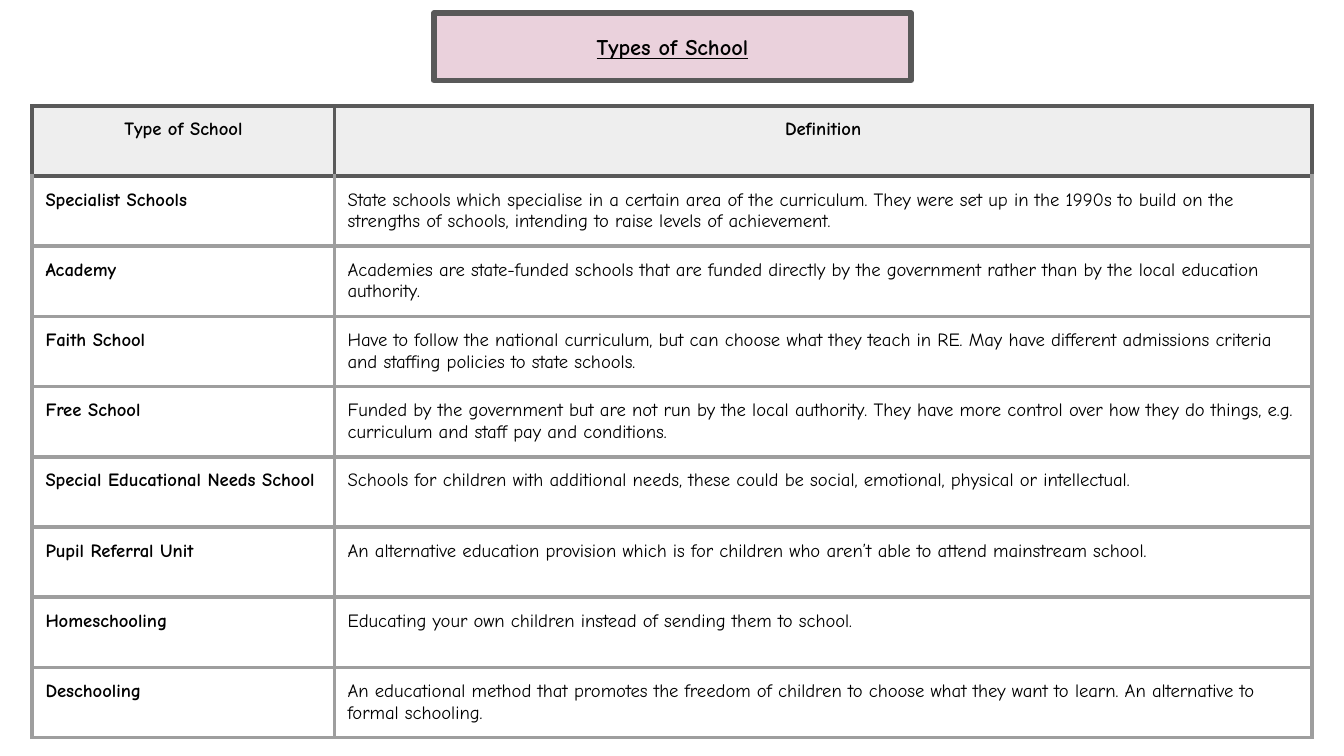
from lxml import etree
from pptx import Presentation
from pptx.dml.color import RGBColor
from pptx.enum.text import MSO_ANCHOR, MSO_AUTO_SIZE, PP_ALIGN
from pptx.oxml.ns import qn
from pptx.util import Cm, Pt

CENTER, LEFT = PP_ALIGN.CENTER, PP_ALIGN.LEFT
MIDDLE, TOP = MSO_ANCHOR.MIDDLE, MSO_ANCHOR.TOP
NO_AUTOFIT = MSO_AUTO_SIZE.NONE
TITLE_ONLY = 5

FONT = "Comic Neue"
BLACK, PINK, PALE_GREY = "000000", "EAD1DC", "EEEEEE"
DARK_GREY, MID_GREY = "595959", "9E9E9E"
INSET = Cm(0.25)
MARGINS = {f"margin_{side}": INSET for side in ("left", "top", "right", "bottom")}

HEADINGS = ("Type of School", "Definition")
SCHOOLS = [
    ("Specialist Schools",
     "State schools which specialise in a certain area of the curriculum. They were set up "
     "in the 1990s to build on the strengths of schools, intending to raise levels of achievement."),
    ("Academy",
     "Academies are state-funded schools that are funded directly by the government rather "
     "than by the local education authority."),
    ("Faith School",
     "Have to follow the national curriculum, but can choose what they teach in RE. May have "
     "different admissions criteria and staffing policies to state schools."),
    ("Free School",
     "Funded by the government but are not run by the local authority. They have more control "
     "over how they do things, e.g. curriculum and staff pay and conditions."),
    ("Special Educational Needs School",
     "Schools for children with additional needs, these could be social, emotional, physical "
     "or intellectual."),
    ("Pupil Referral Unit",
     "An alternative education provision which is for children who aren’t able to attend "
     "mainstream school."),
    ("Homeschooling",
     "Educating your own children instead of sending them to school."),
    ("Deschooling",
     "An educational method that promotes the freedom of children to choose what they want "
     "to learn. An alternative to formal schooling."),
]


def rgb(colour):
    return RGBColor.from_string(colour)


def apply(target, values):
    for name, value in values.items():
        setattr(target, name, value)


def write(frame, text, align, **font_values):
    paragraph = frame.paragraphs[0]
    paragraph.alignment = align
    run = paragraph.add_run()
    run.text = text
    apply(run.font, {"name": FONT, **font_values})
    run.font.color.rgb = rgb(BLACK)


def set_borders(cell, colours, width=Pt(2.25)):
    properties = cell._tc.get_or_add_tcPr()
    for side, colour in colours.items():
        border = etree.SubElement(properties, qn(f"a:ln{side}"), w=str(width))
        fill = etree.SubElement(border, qn("a:solidFill"))
        etree.SubElement(fill, qn("a:srgbClr"), val=colour)


def place_title(slide, left, top, width, height):
    title = slide.shapes.title
    apply(title, {"left": left, "top": top, "width": width, "height": height})
    title.fill.solid()
    title.fill.fore_color.rgb = rgb(PINK)
    title.line.color.rgb = rgb(DARK_GREY)
    title.line.width = Pt(3)
    apply(title.text_frame, {**MARGINS, "vertical_anchor": MIDDLE,
                             "word_wrap": True, "auto_size": NO_AUTOFIT})
    write(title.text_frame, "Types of School", CENTER,
          size=Pt(12), bold=True, underline=True)


def place_schools(slide, left, top, width, height, name_width):
    rows = [HEADINGS, *SCHOOLS]
    table = slide.shapes.add_table(len(rows), 2, left, top, width, height).table
    table.columns[0].width = name_width
    table.columns[1].width = width - name_width

    for row_number, row in enumerate(rows):
        is_heading = row_number == 0
        line = DARK_GREY if is_heading else MID_GREY
        top_line = DARK_GREY if row_number <= 1 else MID_GREY
        bottom_line = line
        for column, text in enumerate(row):
            cell = table.cell(row_number, column)
            apply(cell, {**MARGINS, "vertical_anchor": TOP})
            # Borders come before the fill in the cell properties
            set_borders(cell, {"L": line, "R": line, "T": top_line, "B": bottom_line})
            if is_heading:
                cell.fill.solid()
                cell.fill.fore_color.rgb = rgb(PALE_GREY)
            else:
                cell.fill.background()
            write(cell.text_frame, text, CENTER if is_heading else LEFT,
                  size=Pt(10), bold=is_heading or column == 0)


def main():
    deck = Presentation()
    apply(deck, {"slide_width": Cm(25.4), "slide_height": Cm(14.29)})
    slide = deck.slides.add_slide(deck.slide_layouts[TITLE_ONLY])

    # Title box
    place_title(slide, Cm(8.2), Cm(0.25), Cm(9.02), Cm(1.27))
    # Table of school types
    place_schools(slide, Cm(0.61), Cm(2), Cm(24.18), Cm(11.95), name_width=Cm(5.71))

    deck.save("out.pptx")


if __name__ == "__main__":
    main()
